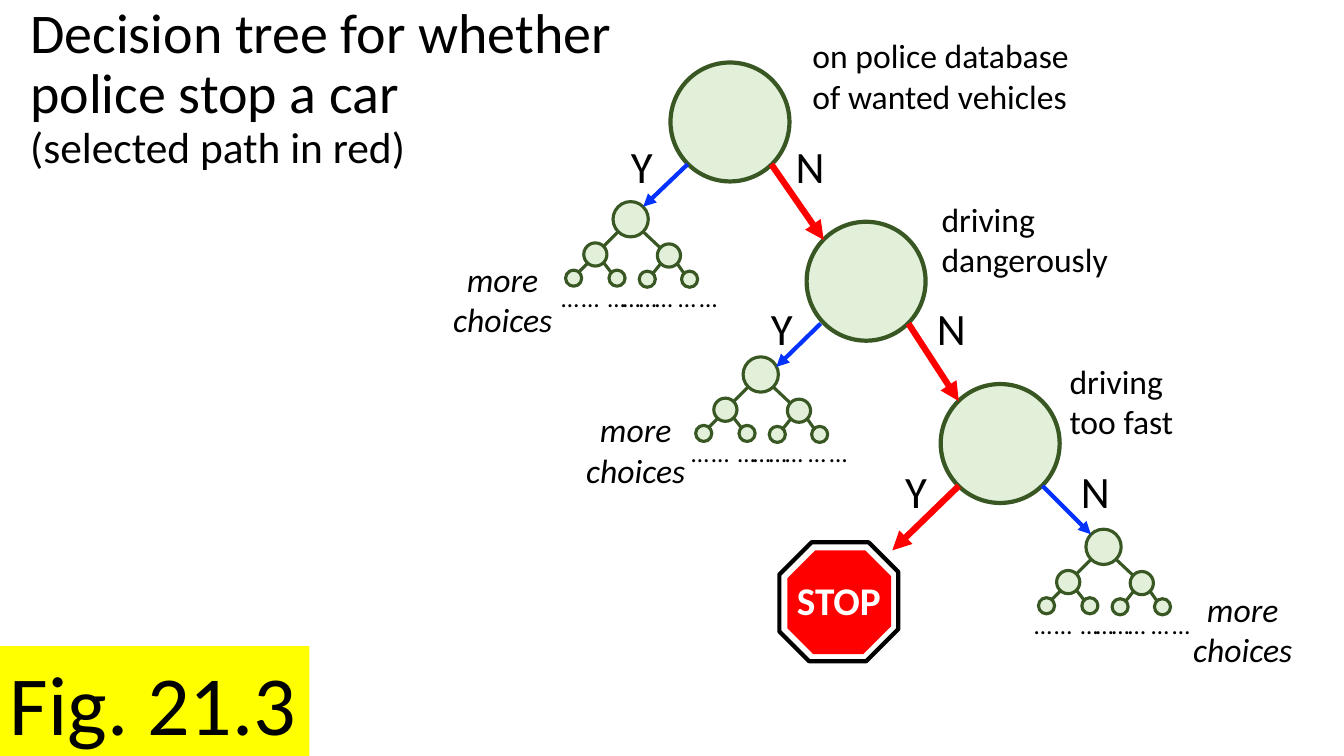
from copy import deepcopy

from lxml import etree
from pptx import Presentation
from pptx.dml.color import RGBColor
from pptx.enum.shapes import MSO_CONNECTOR, MSO_SHAPE
from pptx.enum.text import MSO_ANCHOR, MSO_AUTO_SIZE, PP_ALIGN
from pptx.oxml.ns import qn
from pptx.util import Pt

PX = 9144  # 100 px to the inch
OVAL, SNIPPED, RECT = MSO_SHAPE.OVAL, MSO_SHAPE.SNIP_2_DIAG_RECTANGLE, MSO_SHAPE.RECTANGLE
STRAIGHT = MSO_CONNECTOR.STRAIGHT
LEFT, CENTER = PP_ALIGN.LEFT, PP_ALIGN.CENTER
TOP, MIDDLE = MSO_ANCHOR.TOP, MSO_ANCHOR.MIDDLE
FIT, NO_FIT = MSO_AUTO_SIZE.SHAPE_TO_FIT_TEXT, MSO_AUTO_SIZE.NONE
PALE, GREEN, RED, BLUE = "E2F0D9", "385723", "FF0000", "0432FF"
BLACK, WHITE, YELLOW = "000000", "FFFFFF", "FFFF00"
rgb = RGBColor.from_string

prs = Presentation()
prs.slide_width, prs.slide_height = 1333 * PX, 750 * PX
slide = prs.slides.add_slide(prs.slide_layouts[5])


def add_figure(kind, box, fill, line=None, weight=0):
    figure = slide.shapes.add_shape(kind, *[v * PX for v in box])
    figure.shadow.inherit = False
    figure.fill.solid()
    figure.fill.fore_color.rgb = rgb(fill)
    if line:
        figure.line.color.rgb = rgb(line)
        figure.line.width = Pt(weight)
    else:
        figure.line.fill.background()
    return figure


def format_runs(paragraph, size, color=BLACK, **extra):
    style = {"name": "Calibri", "size": Pt(size), **extra}
    for run in paragraph.runs:
        for attribute, value in style.items():
            setattr(run.font, attribute, value)
        run.font.color.rgb = rgb(color)


# Title
title = slide.shapes.title
title.left, title.top, title.width, title.height = [v * PX for v in (20, 0, 1293, 212)]
title.text_frame.auto_size = NO_FIT
title.text_frame.vertical_anchor = TOP
heading = title.text_frame.paragraphs[0]
heading.text = "Decision tree for whether \npolice stop a car \n(selected path in red)"
heading.alignment, heading.line_spacing = LEFT, 0.9
format_runs(heading, 40)
heading.runs[-1].font.size = Pt(31)
for line_break in heading._p.findall(qn("a:br")):
    line_break.append(deepcopy(heading.runs[0].font._element))

# Decisions: circle corner, question with its box, place of Y and N
decisions = [
    ((665, 62), "on police database \nof wanted vehicles", (796, 30, 284, 91), (601, 768, 133)),
    ((800, 220), "driving\ndangerously", (924, 192, 196, 91), (740, 908, 293)),
    ((933, 381), "driving\ntoo fast", (1051, 353, 196, 91), (873, 1051, 455)),
]
labels = []  # text, box, alignment, format
for corner, question, question_box, (yes_x, no_x, answer_y) in decisions:
    add_figure(OVAL, (*corner, 118, 118), PALE, GREEN, 3)
    labels.append((question, question_box, LEFT, {"size": 24}))
    for answer, x in (("Y", yes_x), ("N", no_x)):
        labels.append((answer, (x, answer_y, 71, 64), CENTER, {"size": 32}))

# Branches between decisions: start, end, colour, weight, arrowhead
links = [
    ((765, 163), (817, 238), RED, 4.5, True),
    ((901, 321), (951, 398), RED, 4.5, True),
    ((951, 482), (885, 546), RED, 4.5, True),
    ((682, 163), (638, 205), BLUE, 3, True),
    ((814, 321), (770, 364), BLUE, 3, True),
    ((1034, 482), (1082, 530), BLUE, 3, True),
]

# Subtrees of further choices, laid out from the corner of each root
nodes = [(-29, 41, 23), (-47, 68, 16), (-4, 68, 16),
         (44, 42, 23), (26, 69, 16), (68, 69, 16), (0, 0, 35)]
twigs = [(5, 30, -9, 44), (30, 30, 47, 46), (-25, 61, -34, 70),
         (-9, 61, -2, 70), (64, 62, 71, 72), (47, 62, 39, 72)]
dots = [-61, -41, -15, 0, 16, 32, 55, 76]
subtrees = [((608, 200), (430, 252)), ((737, 354), (562, 401)), ((1077, 525), (1164, 579))]
for (x, y), note in subtrees:
    for dx, dy, size in nodes:
        add_figure(OVAL, (x + dx, y + dy, size, size), PALE, GREEN, 2.25)
    for x1, y1, x2, y2 in twigs:
        links.append(((x + x1, y + y1), (x + x2, y + y2), GREEN, 2.25, False))
    for dx in dots:
        labels.append(("…", (x + dx, y + 75, 22, 24), LEFT, {"size": 18}))
    labels.append(("more\nchoices", (*note, 137, 91), CENTER, {"size": 24, "italic": True}))

# Lines and arrows
for start, end, color, weight, arrow in links:
    link = slide.shapes.add_connector(STRAIGHT, *[v * PX for v in (*start, *end)])
    link.line.color.rgb = rgb(color)
    link.line.width = Pt(weight)
    properties = link._element.spPr
    if arrow:
        etree.SubElement(properties.find(qn("a:ln")), qn("a:tailEnd"), type="triangle")
    etree.SubElement(properties, qn("a:effectLst"))

# Stop sign
for sign in (add_figure(SNIPPED, (773, 538, 118, 118), WHITE, BLACK, 3),
             add_figure(SNIPPED, (781, 546, 103, 103), RED)):
    sign.adjustments[0], sign.adjustments[1] = 0.27, 0.25
labels.append(("STOP", (770, 567, 124, 57), CENTER, {"size": 28, "color": WHITE, "bold": True}))

# Text labels
for text, box, alignment, style in labels:
    frame = slide.shapes.add_textbox(*[v * PX for v in box]).text_frame
    frame.word_wrap = True
    frame.auto_size = FIT
    label = frame.paragraphs[0]
    label.text = text
    label.alignment = alignment
    format_runs(label, **style)

# Figure number
number = add_figure(RECT, (0, 641, 307, 111), YELLOW).text_frame
number.word_wrap = False
number.vertical_anchor = MIDDLE
caption = number.paragraphs[0]
caption.text = "Fig. 21.3"
caption.alignment = LEFT
format_runs(caption, 60)

prs.save("out.pptx")
